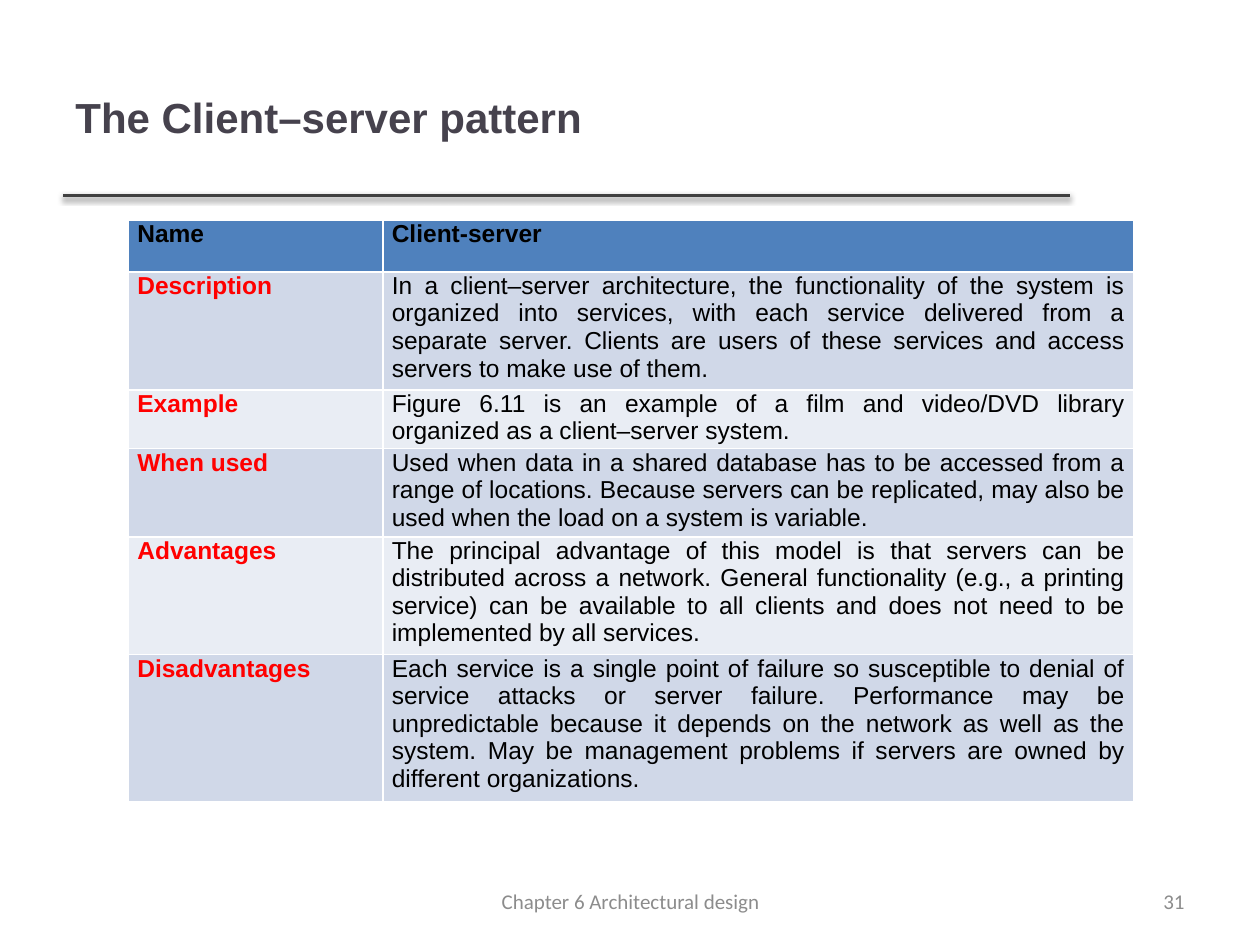
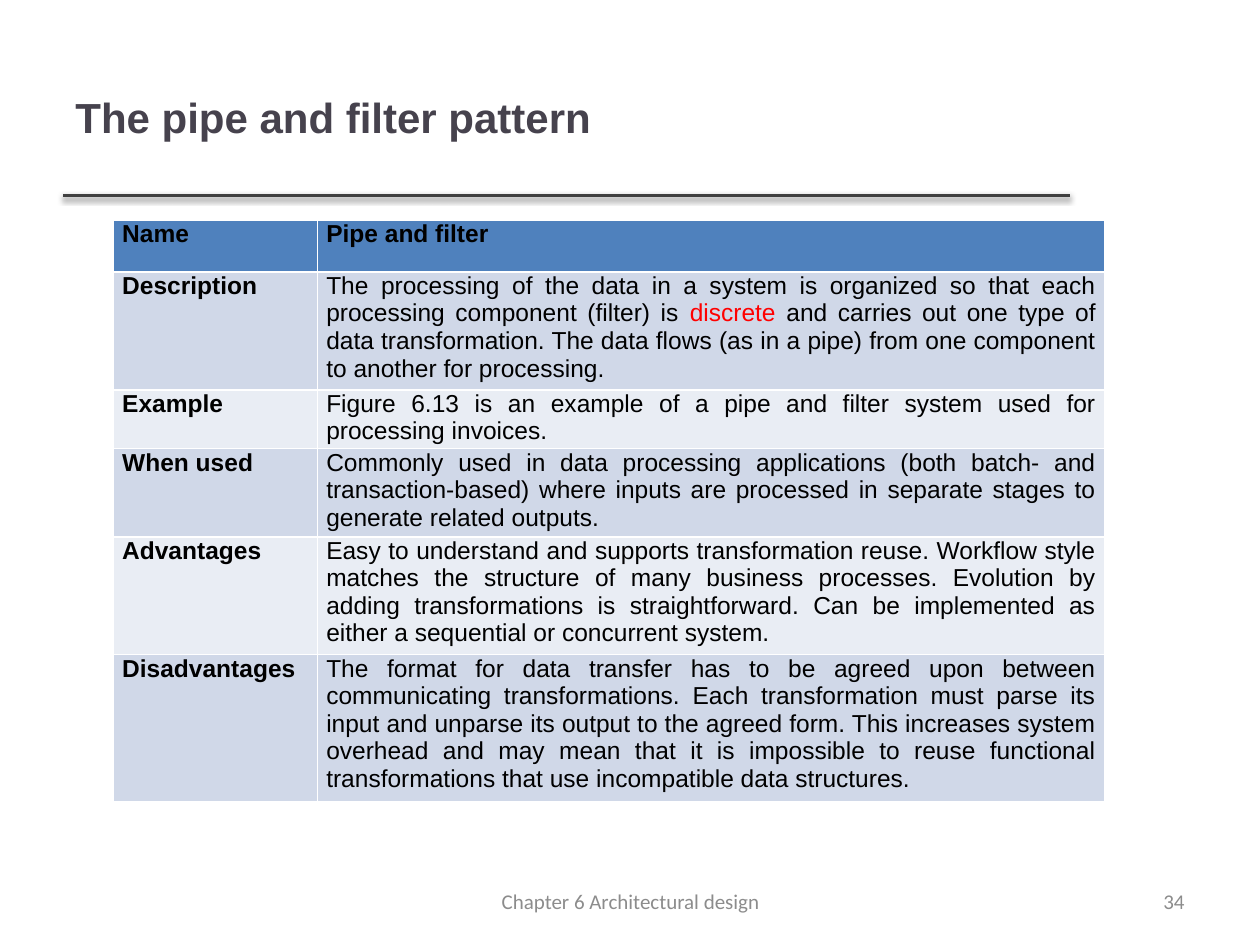
from lxml import etree
from pptx import Presentation
from pptx.dml.color import RGBColor
from pptx.enum import shapes, text
from pptx.util import Inches, Pt

INK = RGBColor(0x46, 0x42, 0x4D)
RULE = RGBColor(0x40, 0x40, 0x40)
GRAY = RGBColor(0x8C, 0x8C, 0x8C)
BLACK = RGBColor(0, 0, 0)
RED = RGBColor(0xFF, 0, 0)
HEAD = RGBColor(0x4F, 0x81, 0xBD)
BANDS = [RGBColor(0xE9, 0xED, 0xF4), RGBColor(0xD0, 0xD8, 0xE8)]

SHADOW = """<a:effectLst xmlns:a="http://schemas.openxmlformats.org/drawingml/2006/main">
<a:outerShdw blurRad="39370" dist="20320" dir="5400000" rotWithShape="0">
<a:srgbClr val="000000"><a:alpha val="38000"/></a:srgbClr></a:outerShdw></a:effectLst>"""

LABELS = ["Name", "Description", "Example", "When used", "Advantages", "Disadvantages"]
HEIGHTS = [0.41, 0.87, 0.44, 0.66, 0.87, 1.1]

PAGES = [
    {
        "title": "The Client–server pattern",
        "number": "31",
        "left": 1.02,
        "cols": [2.02, 5.96],
        "label": RED,
        "red": [],
        "facts": [
            ["Client-server"],
            ["In a client–server architecture, the functionality of the system is organized "
             "into services, with each service delivered from a separate server. Clients are "
             "users of these services and access servers to make use of them."],
            ["Figure 6.11 is an example of a film and video/DVD library organized as a "
             "client–server system."],
            ["Used when data in a shared database has to be accessed from a range of "
             "locations. Because servers can be replicated, may also be used when the load "
             "on a system is variable."],
            ["The principal advantage of this model is that servers can be distributed "
             "across a network. General functionality (e.g., a printing service) can be "
             "available to all clients and does not need to be implemented by all services."],
            ["Each service is a single point of failure so susceptible to denial of service "
             "attacks or server failure. Performance may be unpredictable because it depends "
             "on the network as well as the system. May be management problems if servers "
             "are owned by different organizations."],
        ],
    },
    {
        "title": "The pipe and filter pattern",
        "number": "34",
        "left": 0.9,
        "cols": [1.62, 6.25],
        "label": BLACK,
        "red": ["discrete"],
        "facts": [
            ["Pipe and filter"],
            ["The processing of the data in a system is organized so that each processing "
             "component (filter) is ", "discrete", " and carries out one type of data "
             "transformation. The data flows (as in a pipe) from one component to another "
             "for processing."],
            ["Figure 6.13 is an example of a pipe and filter system used for processing "
             "invoices."],
            ["Commonly used in data processing applications (both batch- and "
             "transaction-based) where inputs are processed in separate stages to generate "
             "related outputs."],
            ["Easy to understand and supports transformation reuse. Workflow style matches "
             "the structure of many business processes. Evolution by adding transformations "
             "is straightforward. Can be implemented as either a sequential or concurrent "
             "system."],
            ["The format for data transfer has to be agreed upon between communicating "
             "transformations. Each transformation must parse its input and unparse its "
             "output to the agreed form. This increases system overhead and may mean that it "
             "is impossible to reuse functional transformations that use incompatible data "
             "structures."],
        ],
    },
]


def style(font, name, size, color, bold=False):
    font.name = name
    font.size = Pt(size)
    font.color.rgb = color
    font.bold = bold


def add_label(slide, words, spot, align, *look):
    frame = slide.shapes.add_textbox(*map(Inches, spot)).text_frame
    frame.word_wrap = True
    frame.vertical_anchor = text.MSO_ANCHOR.MIDDLE
    frame.text = words
    para = frame.paragraphs[0]
    para.alignment = align
    style(para.runs[0].font, *look)


deck = Presentation()
deck.slide_width = Inches(10)
deck.slide_height = Inches(7.5)

for page in PAGES:
    slide = deck.slides.add_slide(deck.slide_layouts[6])

    rule = slide.shapes.add_connector(
        shapes.MSO_CONNECTOR.STRAIGHT, Inches(0.5), Inches(1.55), Inches(8.49), Inches(1.55))
    rule.line.color.rgb = RULE
    rule.line.width = Pt(2)
    rule._element.spPr.append(etree.fromstring(SHADOW))

    add_label(slide, page["title"], (0.5, 0.3, 7.98, 1.25), text.PP_ALIGN.LEFT,
              "Arial", 24, INK, True)

    grid = slide.shapes.add_table(
        len(LABELS), 2, Inches(page["left"]), Inches(1.75),
        Inches(sum(page["cols"])), Inches(sum(HEIGHTS))).table
    for col, width in zip(grid.columns, page["cols"]):
        col.width = Inches(width)

    for row, (label, fact) in enumerate(zip(LABELS, page["facts"])):
        grid.rows[row].height = Inches(HEIGHTS[row])
        for col, parts in enumerate([[label], fact]):
            cell = grid.cell(row, col)
            cell.margin_left = cell.margin_right = Inches(0.07)
            cell.margin_top = cell.margin_bottom = 0
            cell.fill.solid()
            cell.fill.fore_color.rgb = BANDS[row % 2] if row else HEAD
            para = cell.text_frame.paragraphs[0]
            para.alignment = text.PP_ALIGN.JUSTIFY
            for part in parts:
                run = para.add_run()
                run.text = part
                color = page["label"] if row and col == 0 else BLACK
                if part in page["red"]:
                    color = RED
                style(run.font, "Arial", 14, color, row == 0 or col == 0)

    add_label(slide, page["number"], (7.17, 6.95, 2.33, 0.4), text.PP_ALIGN.RIGHT,
              "Calibri", 12, GRAY)
    add_label(slide, "Chapter 6 Architectural design", (3.42, 6.95, 3.17, 0.4),
              text.PP_ALIGN.CENTER, "Calibri", 12, GRAY)

deck.save("out.pptx")
